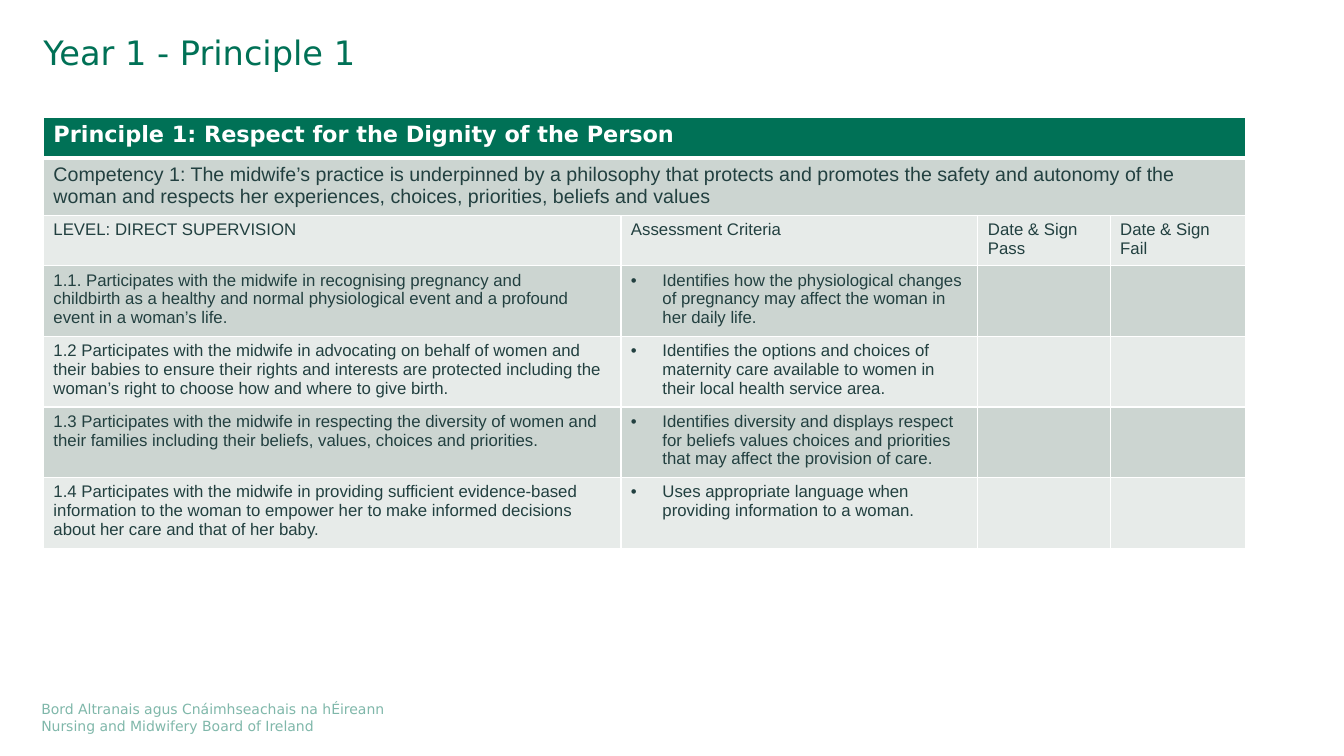
from lxml.etree import SubElement
from pptx import Presentation
from pptx.dml.color import RGBColor
from pptx.enum.text import MSO_ANCHOR
from pptx.oxml.ns import qn
from pptx.util import Pt

GREEN, WHITE, INK = "007156", "FFFFFF", "224040"
BANDS = ["CCD5D1", "E7EBE9"]

COMPETENCY = (
    "Competency 1: The midwife’s practice is underpinned by a philosophy that protects and promotes "
    "the safety and autonomy of the woman and respects her experiences, choices, priorities, "
    "beliefs and values"
)
HEADINGS = ["LEVEL: DIRECT SUPERVISION", "Assessment Criteria", "Date & Sign\nPass", "Date & Sign\nFail"]
CRITERIA = [
    ("1.1. Participates with the midwife in recognising pregnancy and\n"
     "childbirth as a healthy and normal physiological event and a profound event in a woman’s life.",
     "Identifies how the physiological changes of pregnancy may affect the woman in her daily life."),
    ("1.2 Participates with the midwife in advocating on behalf of women and their babies to ensure "
     "their rights and interests are protected including the woman’s right to choose how and where to give birth.",
     "Identifies the options and choices of maternity care available to women in their local health service area."),
    ("1.3 Participates with the midwife in respecting the diversity of women and their families "
     "including their beliefs, values, choices and priorities.",
     "Identifies diversity and displays respect for beliefs values choices and priorities "
     "that may affect the provision of care."),
    ("1.4 Participates with the midwife in providing sufficient evidence-based information to the woman "
     "to empower her to make informed decisions about her care and that of her baby.",
     "Uses appropriate language when providing information to a woman."),
]


def colour(value):
    return RGBColor.from_string(value)


class PageBuilder:
    """Holds the text styles and the page being built."""

    styles = {
        "title": {"name": "DejaVu Sans", "size": Pt(24), "color": GREEN},
        "footer": {"name": "DejaVu Sans", "size": Pt(10), "color": GREEN},
        "header": {"name": "DejaVu Sans", "size": Pt(16), "color": WHITE, "bold": True},
        "competency": {"name": "Arial", "size": Pt(14), "color": INK, "bold": False},
        "body": {"name": "Arial", "size": Pt(12), "color": INK, "bold": False},
    }

    def __init__(self, page):
        self.page = page

    def add_text(self, frame, text, style, bullet=False):
        for index, line in enumerate(text.split("\n")):
            para = frame.paragraphs[0] if index == 0 else frame.add_paragraph()
            if bullet:
                properties = para._p.get_or_add_pPr()
                properties.set("marL", str(Pt(22.5)))
                properties.set("indent", str(Pt(-22.5)))
                SubElement(properties, qn("a:buFont"), typeface="Arial")
                SubElement(properties, qn("a:buChar"), char="•")
            span = para.add_run()
            span.text = line
            for name, value in self.styles[style].items():
                if name == "color":
                    span.font.color.rgb = colour(value)
                else:
                    setattr(span.font, name, value)

    def text_box(self, left, top, width, height, text, style, spacing=None, opacity=None):
        box = self.page.shapes.add_textbox(Pt(left), Pt(top), Pt(width), Pt(height))
        frame = box.text_frame
        layout = {"word_wrap": True, "vertical_anchor": MSO_ANCHOR.TOP, "margin_left": 0,
                  "margin_top": 0, "margin_right": 0, "margin_bottom": 0}
        for name, value in layout.items():
            setattr(frame, name, value)
        self.add_text(frame, text, style)
        for para in frame.paragraphs:
            if spacing:
                para.line_spacing = spacing
            if opacity:
                for tint in para._p.iter(qn("a:srgbClr")):
                    SubElement(tint, qn("a:alpha"), val=str(opacity * 1000))

    def table(self, left, top, widths, row_height, row_count):
        table = self.page.shapes.add_table(
            row_count, len(widths), Pt(left), Pt(top), Pt(sum(widths)), Pt(row_height * row_count)
        ).table
        for column, width in zip(table.columns, widths):
            column.width = Pt(width)
        for number, row in enumerate(table.rows):
            row.height = Pt(row_height)
            for cell in row.cells:
                # White rules, heavier under the header row
                edges = {"L": 1, "R": 1, "T": 3 if number == 1 else 1, "B": 3 if number == 0 else 1}
                self.borders(cell, edges)
                cell.fill.solid()
                cell.fill.fore_color.rgb = colour(BANDS[(number - 1) % 2] if number else GREEN)
        return table

    def borders(self, cell, edges):
        properties = cell._tc.get_or_add_tcPr()
        for side, weight in edges.items():
            line = SubElement(properties, qn("a:ln" + side), w=str(Pt(weight)))
            fill = SubElement(line, qn("a:solidFill"))
            SubElement(fill, qn("a:srgbClr"), val=WHITE)


def main():
    deck = Presentation()
    deck.slide_width, deck.slide_height = Pt(960), Pt(540)
    builder = PageBuilder(deck.slides.add_slide(deck.slide_layouts[6]))

    # Title and footer
    builder.text_box(31, 26, 897, 37.5, "Year 1 - Principle 1", "title", spacing=0.9)
    builder.text_box(29.5, 500.5, 316, 24.5,
                     "Bord Altranais agus Cnáimhseachais na hÉireann\nNursing and Midwifery Board of Ireland",
                     "footer", opacity=50)

    # Competency table: two full-width rows, headings, then criteria
    table = builder.table(31, 83.5, [412.5, 255, 94.5, 96.5], 29.5, 3 + len(CRITERIA))
    banners = [("Principle 1: Respect for the Dignity of the Person", "header"), (COMPETENCY, "competency")]
    for row, (text, style) in enumerate(banners):
        table.cell(row, 0).merge(table.cell(row, 3))
        builder.add_text(table.cell(row, 0).text_frame, text, style)
    for column, heading in enumerate(HEADINGS):
        builder.add_text(table.cell(2, column).text_frame, heading, "body")
    for row, (skill, criterion) in enumerate(CRITERIA, start=3):
        builder.add_text(table.cell(row, 0).text_frame, skill, "body")
        builder.add_text(table.cell(row, 1).text_frame, criterion, "body", bullet=True)

    deck.save("out.pptx")


if __name__ == "__main__":
    main()
